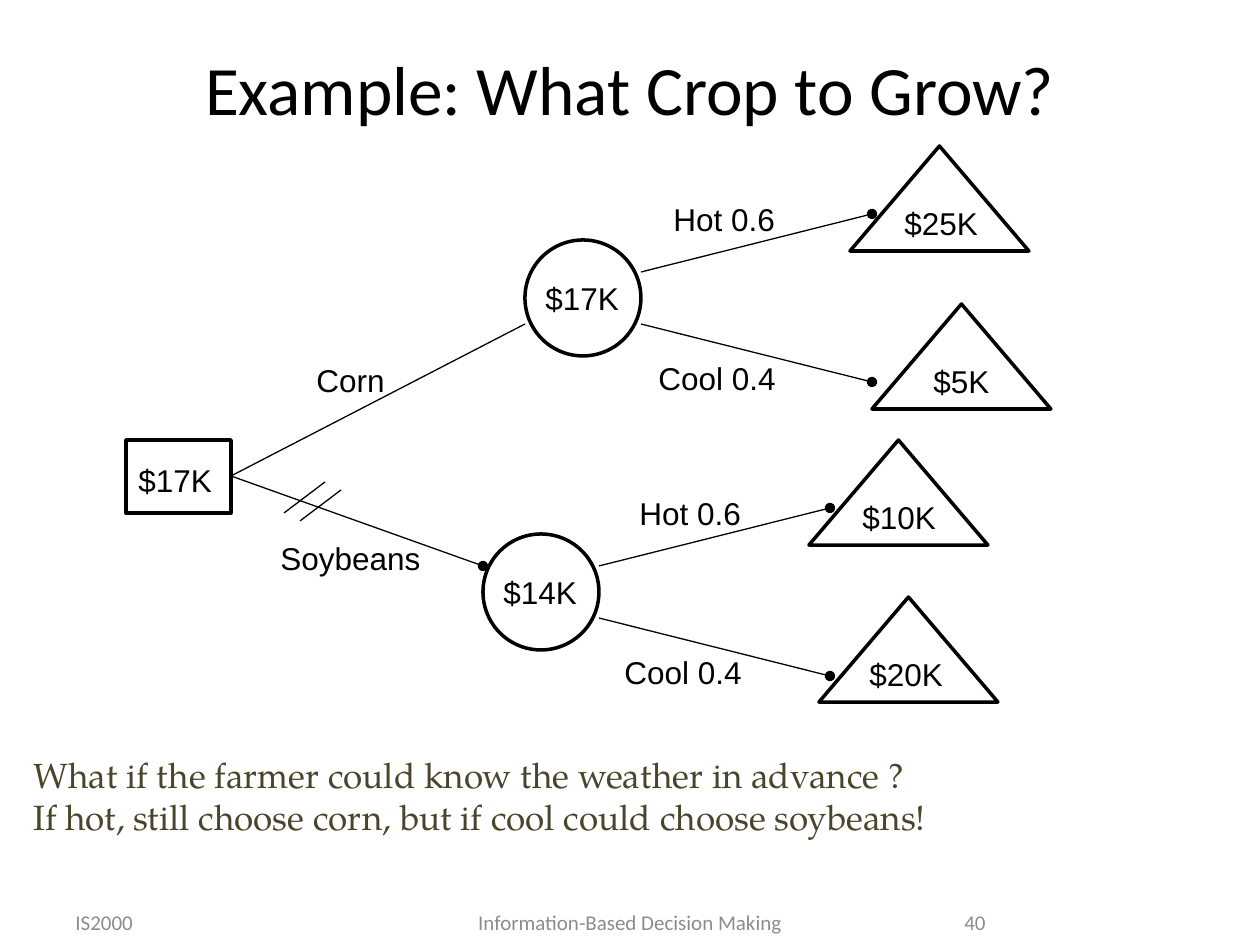
from dataclasses import dataclass

from lxml.etree import SubElement
from pptx import Presentation
from pptx.dml.color import RGBColor
from pptx.enum.shapes import MSO_CONNECTOR as Connector, MSO_SHAPE as Preset
from pptx.enum.text import MSO_ANCHOR as Anchor, MSO_AUTO_SIZE as AutoSize, PP_ALIGN as Align
from pptx.oxml.ns import qn
from pptx.util import Emu, Pt

PX_PER_INCH = 126
COLORS = {"ink": "000000", "question": "4A452A", "footer": "8C8C8C"}
DIAGRAM_FONT = {"name": "Arial", "size": Pt(18)}
QUESTION_FONT = {"name": "TeX Gyre Pagella", "size": Pt(20)}
FOOTER_FONT = {"name": "Calibri", "size": Pt(12)}
TITLE_FONT = {"name": "Calibri", "size": Pt(39.6)}
LABEL_FRAME = {"word_wrap": False, "auto_size": AutoSize.SHAPE_TO_FIT_TEXT}
QUESTION_FRAME = {"word_wrap": True, "auto_size": AutoSize.SHAPE_TO_FIT_TEXT}
MIDDLE_FRAME = {"word_wrap": True, "vertical_anchor": Anchor.MIDDLE}
LABEL_HEIGHT = 50
VALUE_WIDTH = 100


@dataclass(frozen=True)
class Payoff:
    x: int
    y: int
    value: str
    value_x: int
    value_width: int = VALUE_WIDTH


@dataclass(frozen=True)
class Chance:
    x: int
    y: int
    value: str
    label_x: int
    hot: Payoff
    cool: Payoff


@dataclass(frozen=True)
class Label:
    text: str
    x: int
    y: int
    width: int


@dataclass(frozen=True)
class Footer:
    text: str
    x: int
    width: int
    alignment: Align


CHANCES = [
    Chance(525, 240, "$17K", 661,
           Payoff(850, 146, "$25K", 892), Payoff(872, 304, "$5K", 921, 81)),
    Chance(483, 534, "$14K", 627,
           Payoff(809, 440, "$10K", 850), Payoff(819, 597, "$20K", 857)),
]
DECISION_LABELS = [
    Label("$17K", 126, 455, VALUE_WIDTH),
    Label("Corn", 304, 355, 94),
    Label("Soybeans", 268, 533, 166),
]
QUESTION = [
    "What if the farmer could know the weather in advance ?",
    "If hot, still choose corn, but if cool could choose soybeans!",
]
FOOTERS = [
    Footer("40", 903, 95, Align.RIGHT),
    Footer("IS2000", 63, 294, Align.LEFT),
    Footer("Information-Based Decision Making", 387, 486, Align.CENTER),
]


def px(length: int) -> Emu:
    return Emu(round(length * 914400 / PX_PER_INCH))


def apply(target, values: dict) -> None:
    for name, value in values.items():
        setattr(target, name, value)


def write(shape, lines: list[str], font: dict, color: str, frame: dict,
          alignment: Align = Align.LEFT) -> None:
    text_frame = shape.text_frame
    apply(text_frame, frame)
    text_frame.text = "\n".join(lines)
    for paragraph in text_frame.paragraphs:
        paragraph.alignment = alignment
        apply(paragraph.font, font)
        paragraph.font.color.rgb = RGBColor.from_string(COLORS[color])


def add_text(slide, x: int, y: int, width: int, height: int, *args) -> None:
    write(slide.shapes.add_textbox(px(x), px(y), px(width), px(height)), *args)


def add_label(slide, text: str, x: int, y: int, width: int) -> None:
    add_text(slide, x, y, width, LABEL_HEIGHT, [text], DIAGRAM_FONT, "ink", LABEL_FRAME)


def add_node(slide, preset: Preset, x: int, y: int, width: int, height: int) -> None:
    shape = slide.shapes.add_shape(preset, px(x), px(y), px(width), px(height))
    shape.shadow.inherit = False
    shape.fill.background()
    shape.line.width = Pt(2)
    shape.line.color.rgb = RGBColor.from_string(COLORS["ink"])


def add_line(slide, x1: int, y1: int, x2: int, y2: int, dot: bool = False) -> None:
    line = slide.shapes.add_connector(Connector.STRAIGHT, px(x1), px(y1), px(x2), px(y2))
    line.line.width = Pt(0.75)
    line.line.color.rgb = RGBColor.from_string(COLORS["ink"])
    if dot:
        SubElement(line.line._get_or_add_ln(), qn("a:tailEnd"), type="oval")
    SubElement(line._element.spPr, qn("a:effectLst"))


def add_payoff(slide, payoff: Payoff) -> None:
    add_node(slide, Preset.ISOSCELES_TRIANGLE, payoff.x, payoff.y, 179, 105)
    add_label(slide, payoff.value, payoff.value_x, payoff.y + 52, payoff.value_width)


def add_chance(slide, chance: Chance) -> None:
    x, y = chance.x, chance.y
    add_node(slide, Preset.OVAL, x, y, 116, 116)
    add_label(slide, chance.value, x + 8, y + 33, VALUE_WIDTH)
    add_line(slide, x + 116, y + 32, x + 347, y - 26, dot=True)
    add_line(slide, x + 116, y + 84, x + 347, y + 142, dot=True)
    add_label(slide, "Hot 0.6", chance.label_x, y - 46, 128)
    add_label(slide, "Cool 0.4", chance.label_x - 15, y + 113, 144)
    add_payoff(slide, chance.hot)
    add_payoff(slide, chance.cool)


def add_decision(slide) -> None:
    add_node(slide, Preset.RECTANGLE, 126, 440, 105, 73)
    add_line(slide, 231, 476, 525, 324)
    add_line(slide, 231, 476, 483, 566, dot=True)
    for x, y in [(284, 513), (300, 521)]:
        add_line(slide, x, y, x + 41, y - 31)
    for label in DECISION_LABELS:
        add_label(slide, label.text, label.x, label.y, label.width)


def main() -> None:
    presentation = Presentation()
    apply(presentation, {"slide_width": px(1260), "slide_height": px(945)})
    slide = presentation.slides.add_slide(presentation.slide_layouts[5])

    title = slide.shapes.title
    apply(title, {"left": px(63), "top": px(38), "width": px(1134), "height": px(100)})
    write(title, ["Example: What Crop to Grow?"], TITLE_FONT, "ink", MIDDLE_FRAME, Align.CENTER)

    add_decision(slide)
    for chance in CHANCES:
        add_chance(slide, chance)

    add_text(slide, 21, 747, 1092, 97, QUESTION, QUESTION_FONT, "question", QUESTION_FRAME)
    for footer in FOOTERS:
        add_text(slide, footer.x, 903, footer.width, 39, [footer.text],
                 FOOTER_FONT, "footer", MIDDLE_FRAME, footer.alignment)

    presentation.save("out.pptx")


if __name__ == "__main__":
    main()
